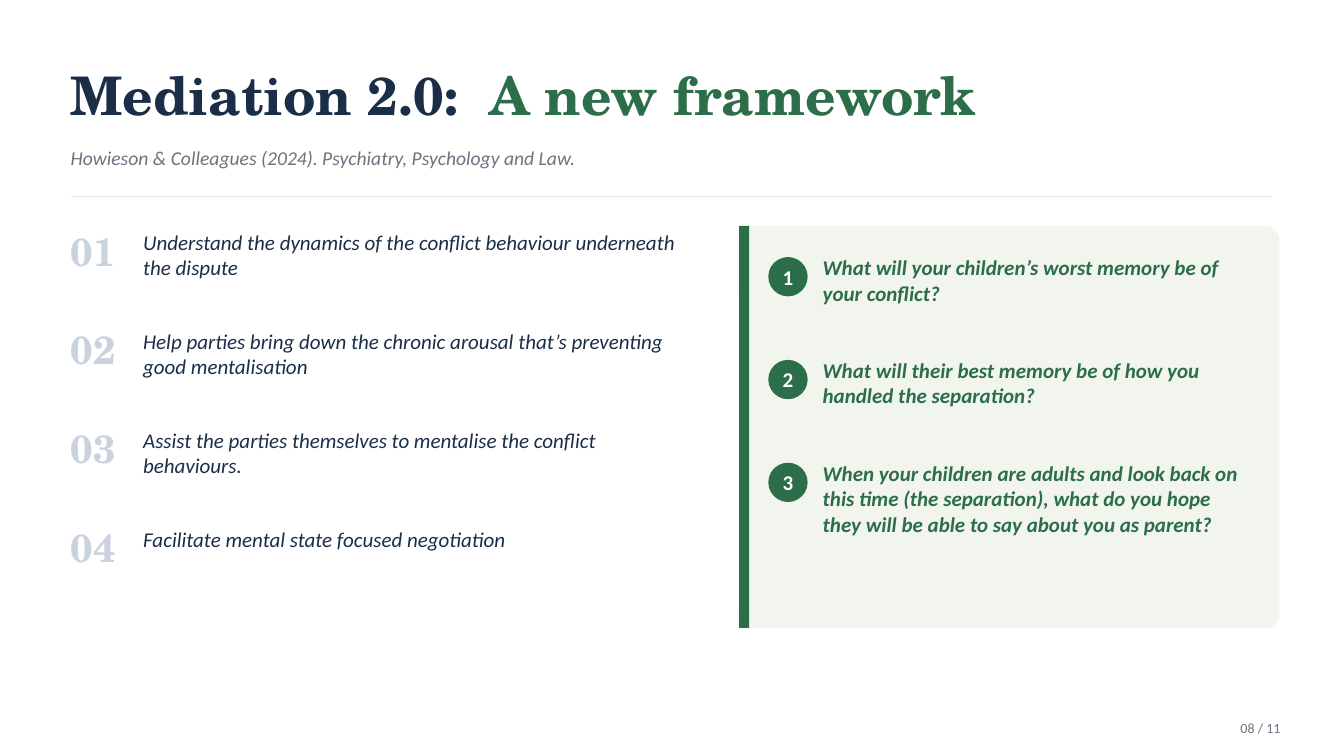
"""Build the slide on the Mediation 2.0 framework."""
import pptx
import pptx.dml.color
import pptx.enum.shapes
import pptx.enum.text
import pptx.oxml.ns
import pptx.util
from pptx.util import Inches

SERIF, SANS = "TeX Gyre Schola", "Calibri"
NAVY, GREEN, GREY = "1A2E47", "2C6E49", "6B7480"
PALE_BLUE, PALE_GREEN, RULE_GREY, WHITE = "C9D2DE", "F1F5EE", "E2E6EB", "FFFFFF"

TITLE = [("Mediation 2.0: ", NAVY), (" A new framework", GREEN)]
CITATION = "Howieson & Colleagues (2024). Psychiatry, Psychology and Law."
STEPS = [
    "Understand the dynamics of the conflict behaviour underneath the dispute",
    "Help parties bring down the chronic arousal that’s preventing good mentalisation",
    "Assist the parties themselves to mentalise the conflict behaviours.",
    "Facilitate mental state focused negotiation",
]
QUESTIONS = [
    ("What will your children’s worst memory be of your conflict?", 0.77),
    ("What will their best memory be of how you handled the separation?", 0.77),
    ("When your children are adults and look back on this time (the separation), "
     "what do you hope they will be able to say about you as parent?", 1.59),
]
PAGE_NUMBER = "08 / 11"

LEFT, CONTENT_WIDTH = 0.7, 11.92
STEP_TOP, STEP_PITCH = 2.25, 0.98
PANEL_LEFT, PANEL_TOP, PANEL_HEIGHT = 7.33, 2.24, 3.99
BADGE_TOP, BADGE_SIZE, QUESTION_PITCH = 2.55, 0.39, 1.02

ALIGN = pptx.enum.text.PP_ALIGN
ANCHOR = pptx.enum.text.MSO_ANCHOR
SHAPE = pptx.enum.shapes.MSO_SHAPE


def color(hex_string):
    return pptx.dml.color.RGBColor.from_string(hex_string)


def write(holder, runs, size, font=SANS, bold=False, italic=False,
          align=ALIGN.LEFT, anchor=ANCHOR.TOP):
    frame = holder.text_frame
    frame.word_wrap = True
    frame.auto_size = pptx.enum.text.MSO_AUTO_SIZE.NONE
    frame.vertical_anchor = anchor
    frame.margin_left = frame.margin_right = frame.margin_top = frame.margin_bottom = 0
    paragraph = frame.paragraphs[0]
    paragraph.alignment = align
    for text, ink in runs:
        run = paragraph.add_run()
        run.text = text
        run.font.name = font
        run.font.size = pptx.util.Pt(size)
        run.font.bold = bold
        run.font.italic = italic
        run.font.color.rgb = color(ink)


def add_text(slide, box, text, ink, size, **style):
    holder = slide.shapes.add_textbox(*map(Inches, box))
    write(holder, [(text, ink)], size, **style)


def add_filled(slide, preset, box, fill):
    shape = slide.shapes.add_shape(preset, *map(Inches, box))
    shape.shadow.inherit = False
    shape.fill.solid()
    shape.fill.fore_color.rgb = color(fill)
    shape.line.fill.background()
    return shape


def add_header(slide):
    title = slide.shapes.title
    title.left, title.top = Inches(LEFT), Inches(0.55)
    title.width, title.height = Inches(CONTENT_WIDTH), Inches(0.77)
    write(title, TITLE, 38, font=SERIF, bold=True, anchor=ANCHOR.MIDDLE)
    add_text(slide, (LEFT, 1.4, CONTENT_WIDTH, 0.33), CITATION, GREY, 14,
             italic=True, anchor=ANCHOR.MIDDLE)
    rule = slide.shapes.add_connector(
        pptx.enum.shapes.MSO_CONNECTOR.STRAIGHT,
        *map(Inches, (LEFT, 1.95, LEFT + CONTENT_WIDTH, 1.95)))
    rule.line.color.rgb = color(RULE_GREY)
    rule.line.width = pptx.util.Pt(0.75)
    properties = rule._element.spPr
    properties.append(properties.makeelement(pptx.oxml.ns.qn("a:effectLst"), {}))


def add_steps(slide):
    for index, step in enumerate(STEPS):
        top = STEP_TOP + index * STEP_PITCH
        add_text(slide, (LEFT, top, 0.6, 0.55), f"{index + 1:02d}", PALE_BLUE, 28,
                 font=SERIF, bold=True)
        add_text(slide, (1.42, top + 0.03, 5.36, 0.87), step, NAVY, 15, italic=True)


def add_questions(slide):
    panel = add_filled(slide, SHAPE.ROUNDED_RECTANGLE,
                       (PANEL_LEFT, PANEL_TOP, 5.36, PANEL_HEIGHT), PALE_GREEN)
    panel.adjustments[0] = 0.035
    add_filled(slide, SHAPE.RECTANGLE, (PANEL_LEFT, PANEL_TOP, 0.1, PANEL_HEIGHT), GREEN)
    for index, (question, height) in enumerate(QUESTIONS):
        top = BADGE_TOP + index * QUESTION_PITCH
        badge = add_filled(slide, SHAPE.OVAL, (7.62, top, BADGE_SIZE, BADGE_SIZE), GREEN)
        write(badge, [(str(index + 1), WHITE)], 15, bold=True,
              align=ALIGN.CENTER, anchor=ANCHOR.MIDDLE)
        add_text(slide, (8.16, top - 0.02, 4.27, height), question, GREEN, 15,
                 bold=True, italic=True)


def main():
    deck = pptx.Presentation()
    deck.slide_width, deck.slide_height = Inches(13.33), Inches(7.5)
    slide = deck.slides.add_slide(deck.slide_layouts[5])
    add_header(slide)
    add_steps(slide)
    add_questions(slide)
    add_text(slide, (11.9, 7.1, 0.8, 0.25), PAGE_NUMBER, GREY, 10,
             align=ALIGN.RIGHT, anchor=ANCHOR.MIDDLE)
    deck.save("out.pptx")


if __name__ == "__main__":
    main()
